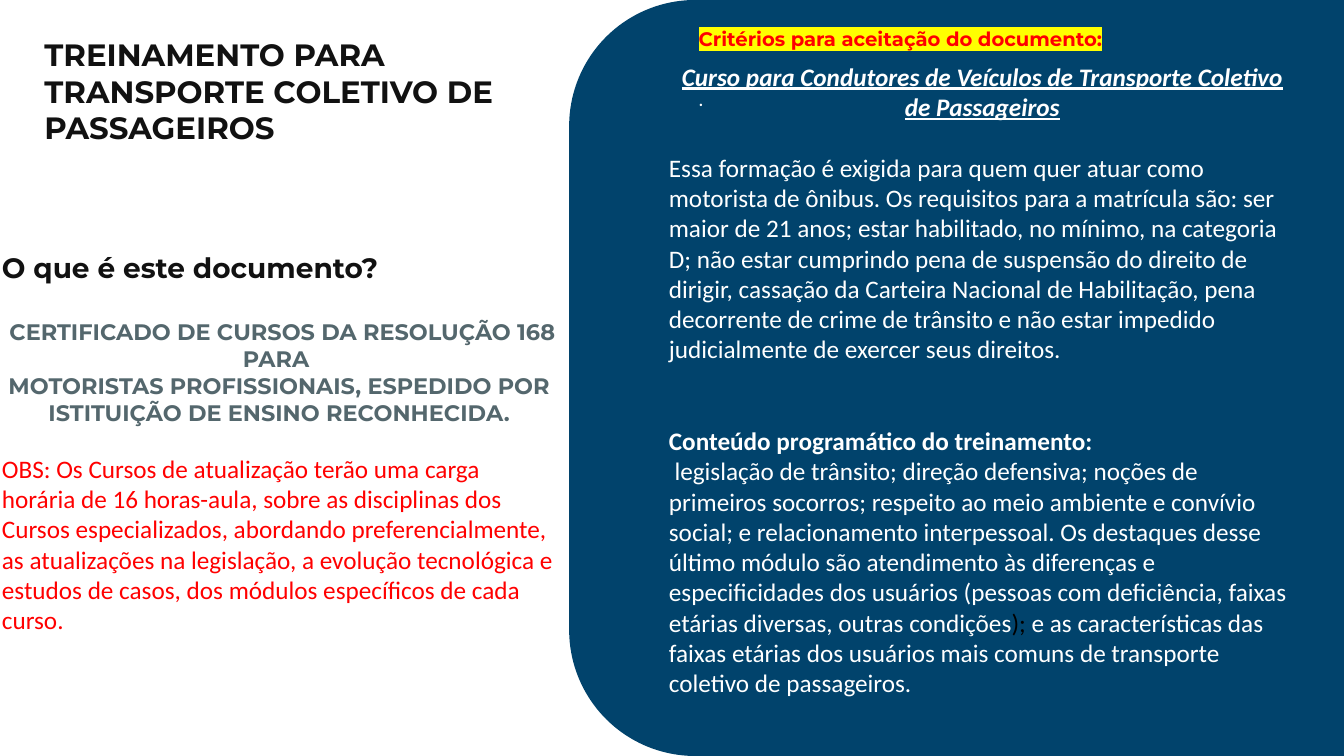
from pptx import Presentation
from pptx.dml.color import RGBColor
from pptx.enum.shapes import MSO_SHAPE
from pptx.enum.text import MSO_ANCHOR, MSO_AUTO_SIZE, PP_ALIGN
from pptx.util import Inches, Pt
from lxml import etree

RECT, ROUND = MSO_SHAPE.RECTANGLE, MSO_SHAPE.ROUNDED_RECTANGLE
LEFT, CENTER = PP_ALIGN.LEFT, PP_ALIGN.CENTER
TOP, GROW = MSO_ANCHOR.TOP, MSO_AUTO_SIZE.SHAPE_TO_FIT_TEXT
NAVY, INK, GRAY = "01436C", "111111", "54676D"
RED, WHITE, BLACK, YELLOW = "FF0000", "FFFFFF", "000000", "FFFF00"
HEAD, BODY = "Montserrat", "Calibri"


def color(code):
    return RGBColor.from_string(code)


def write(shape, box, paras):
    """Place a text shape; each paragraph is (space before, align, face, size, runs)."""
    shape.left, shape.top, shape.width, shape.height = map(Inches, box)
    frame = shape.text_frame
    frame.word_wrap = True
    frame.auto_size = GROW
    frame.vertical_anchor = TOP
    for i, (gap, align, face, size, runs) in enumerate(paras):
        para = frame.paragraphs[0] if i == 0 else frame.add_paragraph()
        para.alignment = align
        para.line_spacing = 1.0
        para.space_before = Pt(gap)
        for text, tint, bold in runs:
            run = para.add_run()
            run.text = text
            font = run.font
            font.name, font.size, font.bold = face, Pt(size), bold
            font.color.rgb = color(tint)


deck = Presentation()
deck.slide_width, deck.slide_height = Inches(26.66), Inches(15)
slide = deck.slides.add_slide(deck.slide_layouts[5])
shapes = slide.shapes

# Navy panel with rounded left corners
for kind, left, width in ((RECT, 13.76, 12.9), (ROUND, 11.29, 15.24)):
    panel = shapes.add_shape(kind, Inches(left), 0, Inches(width), Inches(15))
    panel.shadow.inherit = False
    panel.fill.solid()
    panel.fill.fore_color.rgb = color(NAVY)
    panel.line.fill.background()

# Title
write(shapes.title, (0.78, 0.65, 10.13, 2.32), [
    (0, LEFT, HEAD, 44,
     [("TREINAMENTO PARA TRANSPORTE COLETIVO DE PASSAGEIROS", INK, True)]),
])

# What the document is
about = shapes.add_textbox(0, 0, 0, 0)
write(about, (-0.06, 4.92, 11.2, 7.78), [
    (0, LEFT, HEAD, 40, [("O que é este documento?", INK, True)]),
    (49, CENTER, HEAD, 32,
     [(" CERTIFICADO DE CURSOS DA RESOLUÇÃO 168 PARA ", GRAY, True)]),
    (0, CENTER, HEAD, 32,
     [("MOTORISTAS PROFISSIONAIS, ESPEDIDO POR ISTITUIÇÃO DE ENSINO "
       "RECONHECIDA.", GRAY, True)]),
    (39, LEFT, BODY, 36,
     [("OBS: Os Cursos de atualização terão uma carga horária de 16 horas-aula, "
       "sobre as disciplinas dos Cursos especializados, abordando "
       "preferencialmente, as atualizações na legislação, a evolução tecnológica "
       "e estudos de casos, dos módulos específicos de cada curso.", RED, False)]),
])

# Heading of the criteria, highlighted
rules = shapes.add_textbox(0, 0, 0, 0)
write(rules, (13.76, 0.48, 12.12, 1.78), [
    (0, LEFT, HEAD, 28, [("Critérios para aceitação do documento:", RED, True)]),
    (49, LEFT, HEAD, 32, [(".", WHITE, False)]),
])
props = rules.text_frame.paragraphs[0].runs[0].font._element
space = "{http://schemas.openxmlformats.org/drawingml/2006/main}"
mark = etree.Element(space + "highlight")
etree.SubElement(mark, space + "srgbClr", val=YELLOW)
props.find(space + "solidFill").addnext(mark)

# Course requirements and contents
course = shapes.add_textbox(0, 0, 0, 0)
write(course, (13.17, 1.16, 12.63, 13.73), [
    (0, CENTER, BODY, 36,
     [("Curso para Condutores de Veículos de Transporte Coletivo de Passageiros",
       WHITE, True)]),
    (44, LEFT, BODY, 36,
     [("Essa formação é exigida para quem quer atuar como motorista de ônibus. "
       "Os requisitos para a matrícula são: ser maior de 21 anos; estar "
       "habilitado, no mínimo, na categoria D; não estar cumprindo pena de "
       "suspensão do direito de dirigir, cassação da Carteira Nacional de "
       "Habilitação, pena decorrente de crime de trânsito e não estar impedido "
       "judicialmente de exercer seus direitos.", WHITE, False)]),
    (88, LEFT, BODY, 36, [("Conteúdo programático do treinamento:", WHITE, True)]),
    (0, LEFT, BODY, 36,
     [(" legislação de trânsito; direção defensiva; noções de primeiros socorros; "
       "respeito ao meio ambiente e convívio social; e relacionamento "
       "interpessoal. Os destaques desse último módulo são atendimento às "
       "diferenças e especificidades dos usuários (pessoas com deficiência, "
       "faixas etárias diversas, outras condições", WHITE, False),
      ("); ", BLACK, False),
      ("e as características das faixas etárias dos usuários mais comuns de "
       "transporte coletivo de passageiros.", WHITE, False)]),
])
name = course.text_frame.paragraphs[0].runs[0].font
name.italic = name.underline = True

deck.save("out.pptx")
